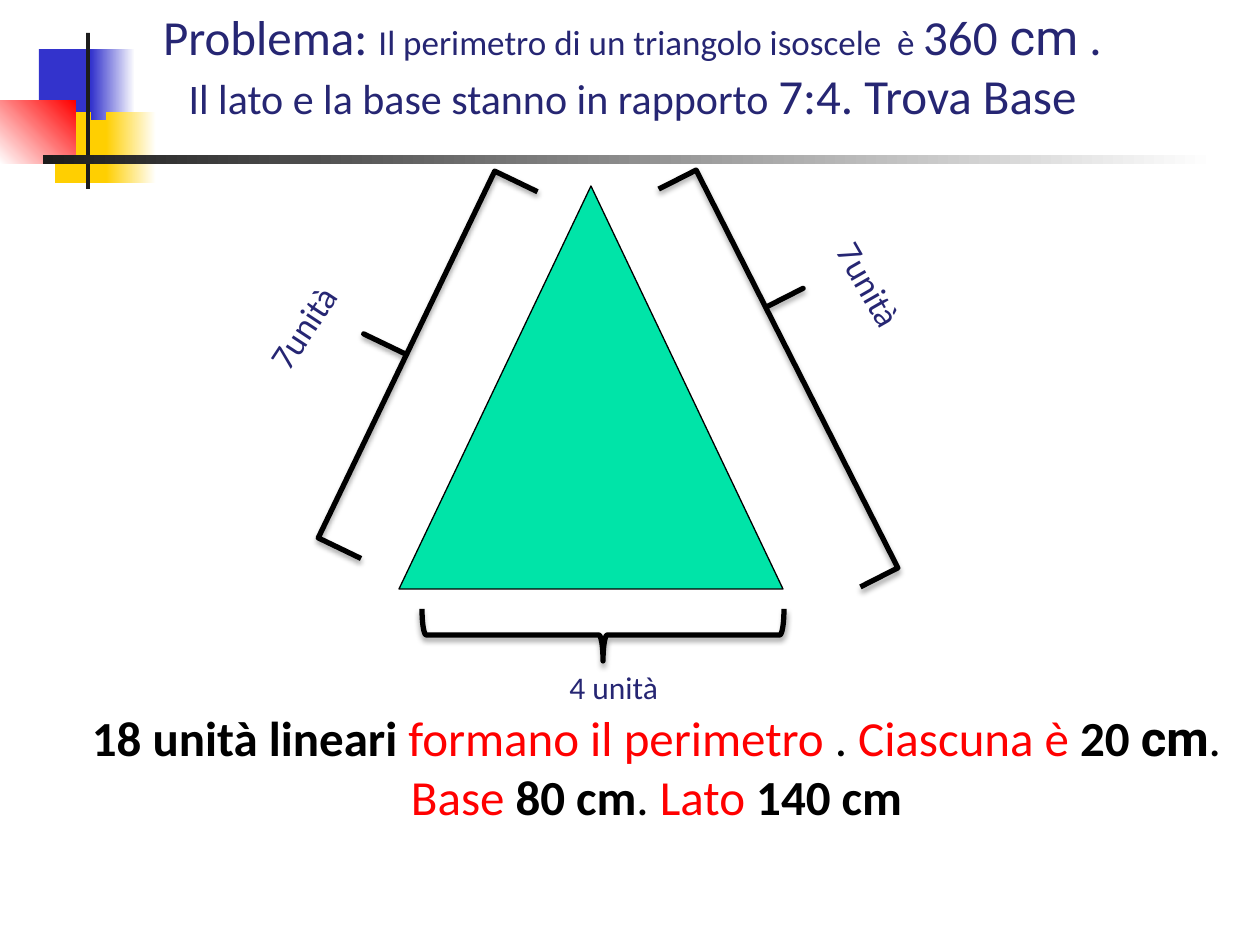
"""Build a slide that solves an isosceles triangle from its perimeter."""
from pptx import Presentation
from pptx.dml.color import RGBColor
from pptx.enum.shapes import MSO_SHAPE
from pptx.enum.text import MSO_ANCHOR, MSO_AUTO_SIZE, PP_ALIGN
from pptx.oxml import parse_xml
from pptx.oxml.ns import nsdecls
from pptx.util import Emu, Pt

COLORS = {
    "navy": "262673", "black": "000000", "red": "FF0000", "white": "FFFFFF",
    "blue": "3333CC", "yellow": "FFCF01", "ink": "1C1C1C", "green": "00E4A8",
}
SHADOW = (
    f'<a:effectLst {nsdecls("a")}>'
    '<a:outerShdw blurRad="39370" dist="22860" dir="5400000" rotWithShape="0">'
    f'<a:srgbClr val="{COLORS["black"]}"><a:alpha val="35000"/></a:srgbClr>'
    "</a:outerShdw></a:effectLst>"
)


def px(length):
    return Emu(round(length * 914400 / 126))


def color(name):
    return RGBColor.from_string(COLORS[name])


class SlideBuilder:
    """Hold the style and the current slide, and add elements to it."""

    font = "Calibri"
    symbol_font = "Roboto"

    def __init__(self, slide):
        self.slide = slide

    def place(self, shape, box):
        shape.left, shape.top, shape.width, shape.height = map(px, box)

    def style(self, font, size=None, ink=None, bold=None, name=None):
        if size:
            font.size = Pt(size)
        if ink:
            font.color.rgb = color(ink)
        if bold is not None:
            font.bold = bold
        if name:
            font.name = name

    def fill_text(self, frame, lines, size, ink, align):
        frame.word_wrap = True
        frame.auto_size = MSO_AUTO_SIZE.NONE
        frame.vertical_anchor = MSO_ANCHOR.TOP
        for index, runs in enumerate(lines):
            paragraph = frame.add_paragraph() if index else frame.paragraphs[0]
            paragraph.alignment = align
            paragraph.space_before = Pt(0)
            self.style(paragraph.font, size, ink, name=self.font)
            for text, changes in runs:
                run = paragraph.add_run()
                run.text = text
                self.style(run.font, **changes)

    def placeholder(self, index, box, lines, ink):
        shape = self.slide.placeholders[index]
        self.place(shape, box)
        self.fill_text(shape.text_frame, lines, 28, ink, PP_ALIGN.CENTER)
        for paragraph in shape.text_frame.paragraphs:
            properties = paragraph._p.get_or_add_pPr()
            properties.set("marL", "0")
            properties.set("indent", "0")
            bullet = parse_xml(f'<a:buNone {nsdecls("a")}/>')
            properties.find("{*}defRPr").addprevious(bullet)

    def label(self, box, text, size, rotation=0):
        shape = self.slide.shapes.add_textbox(*map(px, box))
        shape.rotation = rotation
        self.fill_text(shape.text_frame, [[(text, {})]], size, "navy", PP_ALIGN.LEFT)

    def shape(self, kind, box, fill=None, line=None, width=0):
        shape = self.slide.shapes.add_shape(kind, *map(px, box))
        shape.shadow.inherit = False
        if fill:
            shape.fill.solid()
            shape.fill.fore_color.rgb = color(fill)
        else:
            shape.fill.background()
        if line:
            shape.line.color.rgb = color(line)
            shape.line.width = Pt(width)
        else:
            shape.line.fill.background()
        return shape

    def fade(self, box, start, end, angle=0):
        shape = self.shape(MSO_SHAPE.RECTANGLE, box)
        shape.fill.gradient()
        shape.fill.gradient_angle = angle
        for stop, name in zip(shape.fill.gradient_stops, (start, end)):
            stop.color.rgb = color(name)

    def brace(self, kind, box, rotation, curve, tip):
        shape = self.shape(kind, box, line="black", width=3)
        shape.rotation = rotation
        shape.adjustments[0], shape.adjustments[1] = curve, tip
        properties = shape._element.spPr
        properties.replace(properties.find("{*}effectLst"), parse_xml(SHADOW))


def main():
    presentation = Presentation()
    presentation.slide_width, presentation.slide_height = px(1260), px(945)
    slide = presentation.slides.add_slide(presentation.slide_layouts[1])
    builder = SlideBuilder(slide)

    for box, fill in (
        ((39, 49, 59, 71), "blue"),
        ((55, 112, 57, 71), "yellow"),
    ):
        builder.shape(MSO_SHAPE.RECTANGLE, box, fill)
    builder.fade((91, 49, 44, 71), "blue", "white")
    builder.fade((106, 112, 50, 71), "yellow", "white")
    builder.fade((0, 101, 76, 63), "white", "red", 45)
    builder.shape(MSO_SHAPE.RECTANGLE, (86, 33, 4, 156), "ink")
    builder.fade((43, 155, 1173, 9), "ink", "white")

    builder.shape(MSO_SHAPE.ISOSCELES_TRIANGLE, (399, 186, 384, 403), "green", "black", 0.75)
    builder.brace(MSO_SHAPE.RIGHT_BRACE, (577, 454, 52, 362), 90, 0.08, 0.5)
    builder.brace(MSO_SHAPE.RIGHT_BRACE, (755, 146, 84, 446), 333.1, 0, 0.345)
    builder.brace(MSO_SHAPE.LEFT_BRACE, (359, 151, 95, 407), 25.7, 0, 0.5)
    builder.label((557, 662, 147, 50), "4 unità", 18)
    builder.label((781, 310, 238, 55), "7unità", 20, 60.2)
    builder.label((229, 271, 185, 55), "7unità", 20, 303.4)

    symbol = {"name": builder.symbol_font}
    red, bold = {"ink": "red"}, {"bold": True}
    builder.placeholder(0, (112, 0, 1052, 190), [
        [
            ("Problema: ", {}),
            ("Il perimetro di un triangolo isoscele  è ", {"size": 20}),
            ("360", {}),
            (" cm", symbol),
            (" . ", {}),
        ],
        [
            ("Il lato e la base stanno in rapporto ", {"size": 24}),
            ("7:4. Trova Base ", {}),
        ],
    ], "navy")
    builder.placeholder(1, (53, 701, 1207, 190), [[
        ("18 unità lineari ", bold),
        ("formano il perimetro ", red),
        (". ", {}),
        ("Ciascuna è ", red),
        ("20 ", bold),
        ("cm", {**bold, **symbol}),
        (". ", {}),
        ("Base ", red),
        ("80 cm", bold),
        (". ", {}),
        ("Lato", red),
        (" 140 cm", bold),
    ]], "black")
    presentation.save("out.pptx")


if __name__ == "__main__":
    main()
